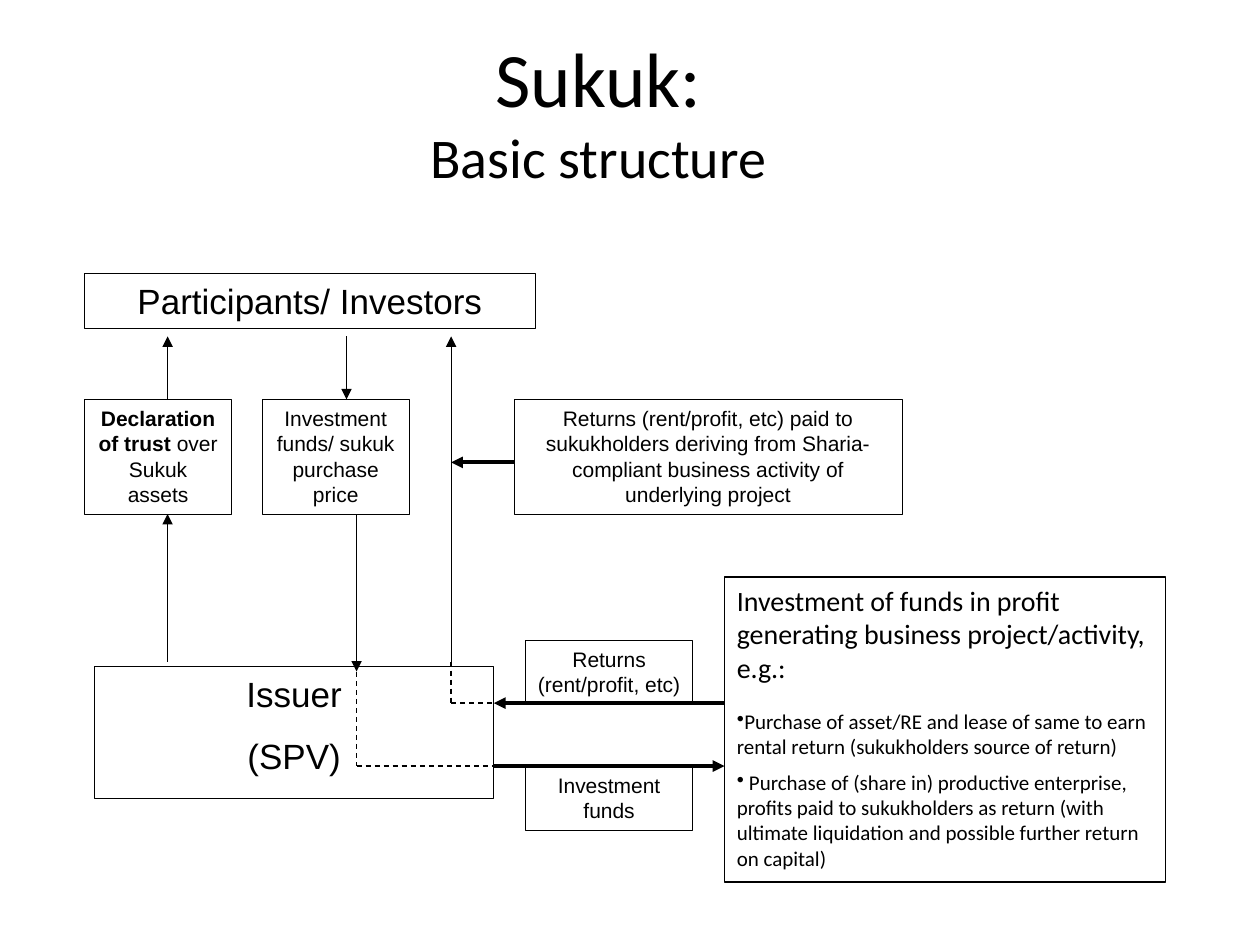
from lxml import etree
from pptx import Presentation
from pptx.dml.color import RGBColor
from pptx.enum.dml import MSO_LINE
from pptx.enum.shapes import MSO_CONNECTOR, MSO_SHAPE
from pptx.enum.text import MSO_ANCHOR, PP_ALIGN
from pptx.oxml.ns import qn
from pptx.util import Inches, Pt

BLACK = "000000"
WHITE = "FFFFFF"


def color(value):
    return RGBColor.from_string(value)


def write(frame, text, size=12, font="Arial", bold=False, align=PP_ALIGN.CENTER,
          before=0, bullet=False, new=True):
    para = frame.paragraphs[-1]
    if new and para.runs:
        para = frame.add_paragraph()
    para.alignment = align
    if before:
        para.space_before = Pt(before)
    if bullet:
        properties = para._p.get_or_add_pPr()
        properties.set("marL", "0")
        properties.set("indent", "0")
        etree.SubElement(properties, qn("a:buChar")).set("char", "•")
    span = para.add_run()
    span.text = text
    span.font.size = Pt(size)
    span.font.name = font
    span.font.bold = bold
    span.font.color.rgb = color(BLACK)
    return para


def add_box(page, left, top, width, height, weight=0.5):
    box = page.shapes.add_shape(MSO_SHAPE.RECTANGLE, Inches(left), Inches(top),
                                Inches(width), Inches(height))
    box.shadow.inherit = False
    box.fill.background()
    box.line.color.rgb = color(BLACK)
    box.line.width = Pt(weight)
    frame = box.text_frame
    frame.word_wrap = True
    frame.vertical_anchor = MSO_ANCHOR.TOP
    return frame


def add_line(page, start, end, weight=0.5, arrow=True, dashed=False):
    line = page.shapes.add_connector(MSO_CONNECTOR.STRAIGHT,
                                     *(Inches(value) for value in (*start, *end)))
    line.line.color.rgb = color(BLACK)
    line.line.width = Pt(weight)
    if dashed:
        line.line.dash_style = MSO_LINE.DASH
    if arrow:
        outline = line.line._get_or_add_ln()
        etree.SubElement(outline, qn("a:tailEnd")).set("type", "triangle")
    etree.SubElement(line._element.spPr, qn("a:effectLst"))


def add_dashes(page, *points):
    for start, end in zip(points, points[1:]):
        add_line(page, start, end, weight=0.75, arrow=False, dashed=True)


def draw_title(page, left, top, width, height):
    box = page.shapes.add_textbox(Inches(left), Inches(top), Inches(width), Inches(height))
    frame = box.text_frame
    frame.word_wrap = True
    frame.vertical_anchor = MSO_ANCHOR.MIDDLE
    para = write(frame, "Sukuk:", size=44, font="Calibri")
    para.add_line_break()
    write(frame, "Basic structure", size=32, font="Calibri", new=False)


def draw_investors(page, left, top, width, height):
    write(add_box(page, left, top, width, 0.44), "Participants/ Investors", size=20)
    arrows, labels, bottom = top + 0.5, top + 1, top + height
    label_height = 0.91

    trust = add_box(page, left, labels, 1.17, label_height)
    write(trust, "Declaration of trust ", bold=True)
    write(trust, "over Sukuk assets", new=False)
    trust_x = left + 0.66
    add_line(page, (trust_x, bottom), (trust_x, labels + label_height))
    add_line(page, (trust_x, labels), (trust_x, arrows))

    funds = add_box(page, left + 1.41, labels, 1.17, label_height)
    write(funds, "Investment funds/ sukuk purchase price")
    add_line(page, (left + 2.08, arrows), (left + 2.08, labels))
    add_line(page, (left + 2.16, labels + label_height), (left + 2.16, bottom + 0.08))

    returns = add_box(page, left + 3.41, labels, 3.08, label_height)
    write(returns, "Returns (rent/profit, etc) paid to sukukholders deriving from "
                   "Sharia-compliant business activity of underlying project")
    returns_x = left + 2.91
    add_line(page, (returns_x, bottom), (returns_x, arrows))
    add_line(page, (left + 3.41, top + 1.5), (returns_x, top + 1.5), weight=2.25)


def draw_issuer(page, left, top, width, height):
    frame = add_box(page, left, top, width, height)
    write(frame, "Issuer", size=20)
    write(frame, "(SPV)", size=20, before=11)
    right, returns_y, funds_y = left + width, top + 0.29, top + 0.79
    add_dashes(page, (left + 2.08, top - 0.46), (left + 2.08, funds_y), (right, funds_y))
    add_dashes(page, (left + 2.83, top - 0.04), (left + 2.83, returns_y), (right, returns_y))


def draw_exchange(page, left, top, width, height):
    label_height = 0.51
    returns_y, funds_y = top + 0.5, top + 1
    for text, y in (("Returns (rent/profit, etc)", top), ("Investment funds", funds_y)):
        write(add_box(page, left + 0.25, y, width - 0.5, label_height), text)
    add_line(page, (left + width, returns_y), (left, returns_y), weight=2.25)
    add_line(page, (left, funds_y), (left + width, funds_y), weight=2.25)


def draw_project(page, left, top, width, height):
    frame = add_box(page, left, top, width, height, weight=0.75)
    style = dict(font="Calibri", align=PP_ALIGN.LEFT)
    write(frame, "Investment of funds in profit generating business project/activity, e.g.:",
          size=16, **style)
    write(frame, "Purchase of asset/RE and lease of same to earn rental return "
                 "(sukukholders source of return)", before=14, bullet=True, **style)
    write(frame, " Purchase of (share in) productive enterprise, profits paid to "
                 "sukukholders as return (with ultimate liquidation and possible "
                 "further return on capital)", before=6, bullet=True, **style)


def main():
    deck = Presentation()
    deck.slide_width = Inches(10)
    deck.slide_height = Inches(7.5)
    page = deck.slides.add_slide(deck.slide_layouts[6])
    page.background.fill.solid()
    page.background.fill.fore_color.rgb = color(WHITE)
    draw_investors(page, 0.67, 2.17, 3.58, 3.08)
    draw_issuer(page, 0.75, 5.29, 3.17, 1.05)
    draw_exchange(page, 3.92, 5.08, 1.83, 1.51)
    draw_project(page, 5.75, 4.58, 3.5, 2.42)
    draw_title(page, 0.25, 0.25, 9, 1.25)
    deck.save("out.pptx")


if __name__ == "__main__":
    main()
